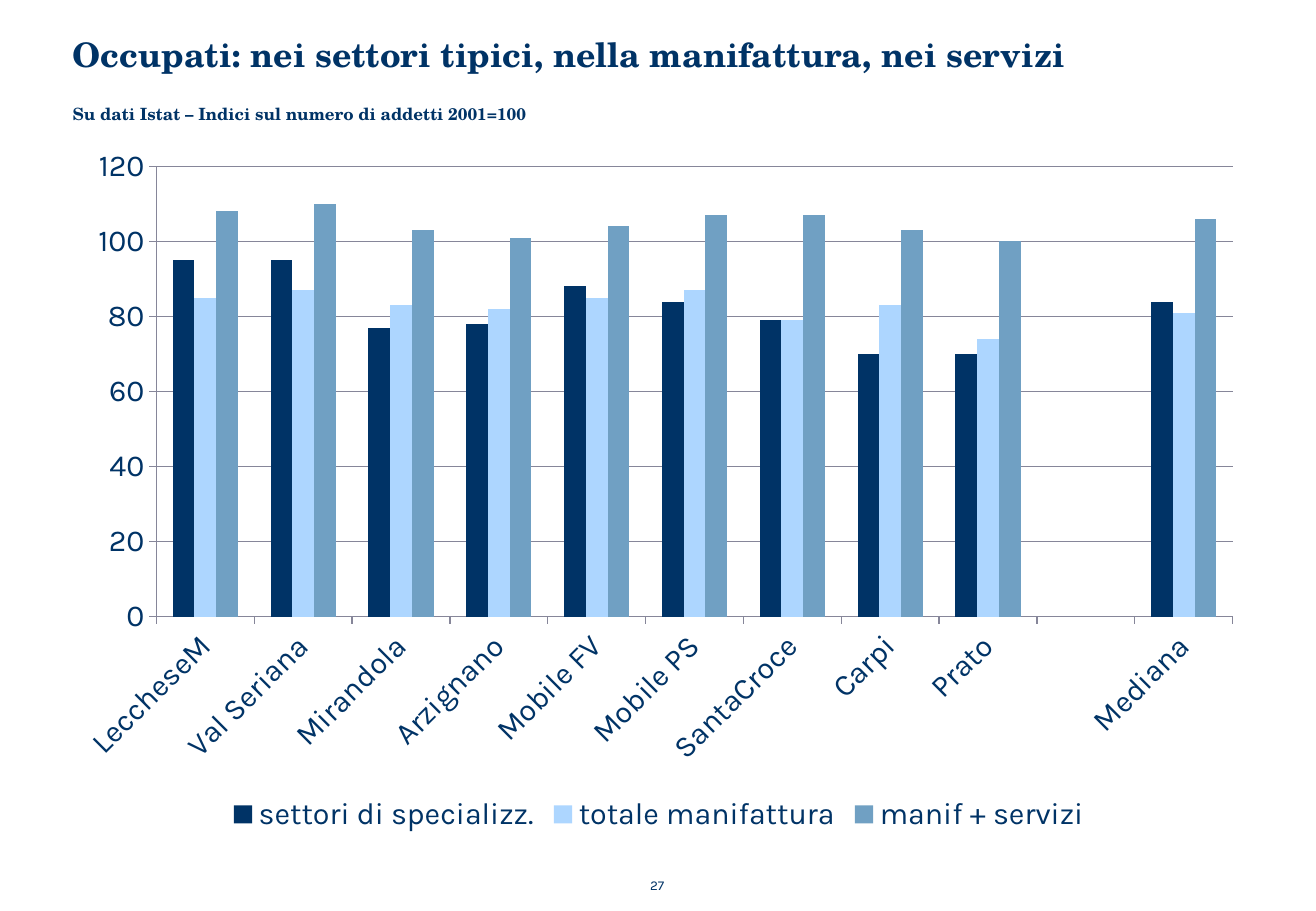
from dataclasses import dataclass

from lxml.etree import SubElement
from pptx import Presentation
from pptx.chart.axis import _BaseAxis
from pptx.chart.data import CategoryChartData
from pptx.dml.color import RGBColor
from pptx.enum.chart import XL_CHART_TYPE, XL_LEGEND_POSITION, XL_TICK_MARK
from pptx.enum.text import MSO_ANCHOR
from pptx.oxml.ns import qn
from pptx.slide import Slide
from pptx.util import Cm, Pt

NAVY = "003366"
GRID_GREY = "868699"
SANS = "Karla"
SERIF = "TeX Gyre Schola"


@dataclass(frozen=True)
class Label:
    text: str
    left: float
    top: float
    width: float
    height: float
    size: float
    font: str
    bold: bool = True
    wrap: bool = True
    anchor: MSO_ANCHOR = MSO_ANCHOR.TOP
    side_inset: float = 0.25
    edge_inset: float = 0.13


@dataclass(frozen=True)
class Series:
    name: str
    color: str
    values: tuple[int | None, ...]


LABELS = [
    Label("Occupati: nei settori tipici, nella manifattura, nei servizi",
          1.27, 0.58, 25, 1.32, 20, SERIF),
    Label("Su dati Istat – Indici sul numero di addetti 2001=100",
          1.27, 1.98, 25, 0.79, 10, SERIF,
          anchor=MSO_ANCHOR.MIDDLE, edge_inset=0.23),
    Label("27", 13.31, 18.16, 0.94, 0.86, 8, SANS,
          bold=False, wrap=False, side_inset=0.28, edge_inset=0.25),
]

DISTRICTS = ["LeccheseM", "Val Seriana", "Mirandola", "Arzignano", "Mobile FV",
             "Mobile PS", "SantaCroce", "Carpi", "Prato", " ", "Mediana"]

SERIES = [
    Series("settori di specializz.", NAVY,
           (95, 95, 77, 78, 88, 84, 79, 70, 70, None, 84)),
    Series("totale manifattura", "ADD6FF",
           (85, 87, 83, 82, 85, 87, 79, 83, 74, None, 81)),
    Series("manif + servizi", "70A0C3",
           (108, 110, 103, 101, 104, 107, 107, 103, 100, None, 106)),
]

PLOT_LAYOUT = {"layoutTarget": "inner", "xMode": "edge", "yMode": "edge",
               "x": "0.08", "y": "0.045", "w": "0.9", "h": "0.64"}


def color(value: str) -> RGBColor:
    return RGBColor.from_string(value)


def add_label(slide: Slide, label: Label) -> None:
    shape = slide.shapes.add_textbox(
        Cm(label.left), Cm(label.top), Cm(label.width), Cm(label.height))
    frame = shape.text_frame
    frame.word_wrap = label.wrap
    frame.vertical_anchor = label.anchor
    frame.margin_left = frame.margin_right = Cm(label.side_inset)
    frame.margin_top = frame.margin_bottom = Cm(label.edge_inset)
    run = frame.paragraphs[0].add_run()
    run.text = label.text
    run.font.name = label.font
    run.font.size = Pt(label.size)
    run.font.bold = label.bold
    run.font.color.rgb = color(NAVY)


def style_axis(axis: _BaseAxis) -> None:
    axis.major_tick_mark = XL_TICK_MARK.OUTSIDE
    axis.minor_tick_mark = XL_TICK_MARK.NONE
    axis.format.line.color.rgb = color(GRID_GREY)
    axis.format.line.width = Pt(0.75)
    font = axis.tick_labels.font
    font.name = SANS
    font.size = Pt(18)
    font.color.rgb = color(NAVY)


def add_employment_chart(slide: Slide) -> None:
    data = CategoryChartData()
    data.categories = DISTRICTS
    for series in SERIES:
        data.add_series(series.name, series.values)
    chart = slide.shapes.add_chart(
        XL_CHART_TYPE.COLUMN_CLUSTERED,
        Cm(1.27), Cm(2.82), Cm(25), Cm(14.71), data).chart
    chart.has_title = False
    chart.font.name = SANS
    chart.font.size = Pt(18)
    chart.font.color.rgb = color(NAVY)
    chart.has_legend = True
    chart.legend.position = XL_LEGEND_POSITION.BOTTOM
    chart.legend.include_in_layout = False

    plot = chart.plots[0]
    plot.gap_width = 150
    plot.overlap = 0
    plot.vary_by_categories = False
    for column, series in zip(plot.series, SERIES):
        column.format.fill.solid()
        column.format.fill.fore_color.rgb = color(series.color)
        column.format.line.fill.background()

    for axis in (chart.category_axis, chart.value_axis):
        style_axis(axis)
    values = chart.value_axis
    values.minimum_scale, values.maximum_scale, values.major_unit = 0, 120, 20
    values.has_major_gridlines = True
    values.major_gridlines.format.line.color.rgb = color(GRID_GREY)
    values.major_gridlines.format.line.width = Pt(0.75)

    chart_element = chart.element
    label_body = chart_element.find(".//" + qn("c:catAx")).find(
        qn("c:txPr")).find(qn("a:bodyPr"))
    label_body.set("rot", "-2700000")
    label_body.set("vert", "horz")

    plot_area = chart_element.find(".//" + qn("c:plotArea"))
    layout = plot_area.find(qn("c:layout"))
    if layout is None:
        layout = SubElement(plot_area, qn("c:layout"))
        plot_area.insert(0, layout)
    manual = SubElement(layout, qn("c:manualLayout"))
    for tag, value in PLOT_LAYOUT.items():
        SubElement(manual, qn(f"c:{tag}")).set("val", value)


def main() -> None:
    presentation = Presentation()
    presentation.slide_width = Cm(27.51)
    presentation.slide_height = Cm(19.05)
    slide = presentation.slides.add_slide(presentation.slide_layouts[6])
    for label in LABELS:
        add_label(slide, label)
    add_employment_chart(slide)
    presentation.save("out.pptx")


if __name__ == "__main__":
    main()
